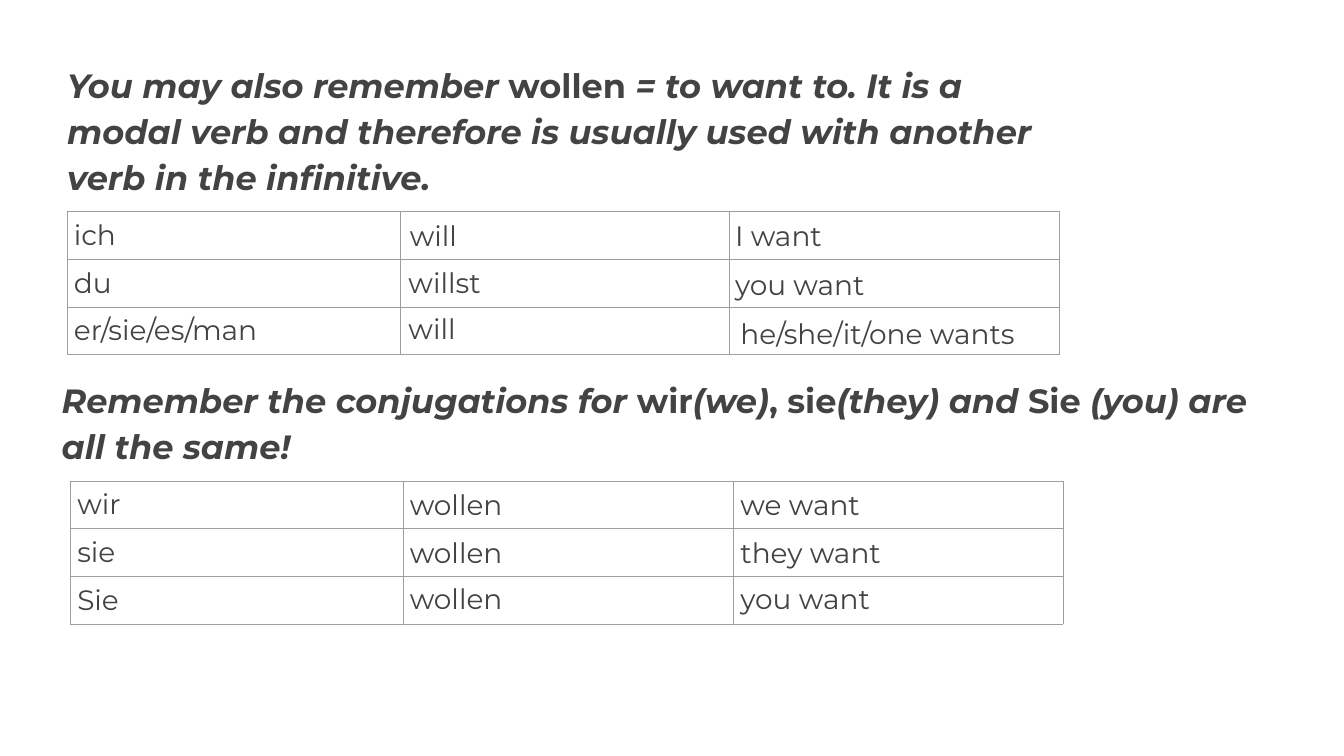
from dataclasses import dataclass

from lxml.etree import SubElement
from pptx import Presentation
from pptx.dml.color import RGBColor
from pptx.enum.text import MSO_ANCHOR, MSO_AUTO_SIZE, PP_ALIGN
from pptx.oxml.ns import qn
from pptx.util import Inches, Pt

INK, RULE = "434343", "9E9E9E"
BODY = {"name": "Montserrat", "size": Pt(30), "bold": False, "italic": False}
HEAD = BODY | {"size": Pt(36), "bold": True}
COLS = (4.95, 4.91, 4.91)
ROW = 0.65


@dataclass
class Label:
    text: str
    left: float
    top: float
    width: float = 4.86


@dataclass
class Verbs:
    left: float
    top: float
    names: tuple[str, ...]
    labels: tuple[Label, ...]


GROUPS = (
    Verbs(1, 3.15, ("ich", "du", "er/sie/es/man"), (
        Label("will", 6, 3.15),
        Label("willst", 5.98, 3.85),
        Label("will", 5.98, 4.54),
        Label("I want", 10.84, 3.15, 4.94),
        Label("you want", 10.84, 3.88, 7.77),
        Label("he/she/it/one wants", 10.92, 4.61, 8.08),
    )),
    Verbs(1.05, 7.16, ("wir", "sie", "Sie"), tuple(
        Label(text, left, top, width)
        for left, width, texts in (
            (6, 4.86, ("wollen",) * 3),
            (10.92, 4.94, ("we want", "they want", "you want")),
        )
        for text, top in zip(texts, (7.16, 7.87, 8.56))
    )),
)

INTRO = (
    "You may also remember", " wollen ",
    "= to want to. It is a modal verb and therefore is usually used "
    "with another verb in the infinitive.",
)
NOTE = ("Remember the conjugations for", " wir", "(we)", ", sie",
        "(they) and ", "Sie", " (you) are all the same!")


def tint(color, value: str) -> None:
    color.rgb = RGBColor.from_string(value)


def style(font, look: dict) -> None:
    for key, value in look.items():
        setattr(font, key, value)
    tint(font.color, INK)


def frame(shape, pad: float):
    """Set wrapping, top anchor and equal insets of a shape's text."""
    text = shape.text_frame
    look = {"word_wrap": True, "auto_size": MSO_AUTO_SIZE.NONE,
            "vertical_anchor": MSO_ANCHOR.TOP}
    sides = ("left", "right", "top", "bottom")
    look |= {f"margin_{side}": Inches(pad) for side in sides}
    for key, value in look.items():
        setattr(text, key, value)
    return text


def add_box(slide, left: float, top: float, width: float, height: float):
    return slide.shapes.add_textbox(*map(Inches, (left, top, width, height)))


def write_head(text, parts: tuple[str, ...]) -> None:
    """Write runs that alternate between italic and upright."""
    para = text.paragraphs[0]
    para.alignment = PP_ALIGN.LEFT
    para.line_spacing = 1.15
    for i, part in enumerate(parts):
        run = para.add_run()
        run.text = part
        style(run.font, HEAD | {"italic": i % 2 == 0})


def add_label(slide, label: Label) -> None:
    box = add_box(slide, label.left, label.top, label.width, 0.69)
    para = frame(box, 0.1).paragraphs[0]
    para.text = label.text
    style(para.runs[0].font, BODY)


def add_edges(cell) -> None:
    props = cell._tc.get_or_add_tcPr()
    for i, side in enumerate(("lnL", "lnR", "lnT", "lnB")):
        line = SubElement(props, qn(f"a:{side}"), w=str(Pt(0.75)))
        fill = SubElement(line, qn("a:solidFill"))
        SubElement(fill, qn("a:srgbClr"), val=RULE)
        props.insert(i, line)


def add_verbs(slide, group: Verbs) -> None:
    count = len(group.names)
    size = (group.left, group.top, sum(COLS), ROW * count)
    table = slide.shapes.add_table(count, len(COLS), *map(Inches, size)).table
    table.first_row = table.horz_banding = False
    for col, width in zip(table.columns, COLS):
        col.width = Inches(width)
    for row, name in zip(table.rows, group.names):
        row.height = Inches(ROW)
        row.cells[0].text = name
        style(row.cells[0].text_frame.paragraphs[0].runs[0].font, BODY)
        for cell in row.cells:
            for side in ("left", "right", "top", "bottom"):
                setattr(cell, f"margin_{side}", Inches(0.1))
            cell.fill.background()
            add_edges(cell)
    for label in group.labels:
        add_label(slide, label)


def main() -> None:
    deck = Presentation()
    deck.slide_width, deck.slide_height = Inches(20), Inches(11.25)
    slide = deck.slides.add_slide(deck.slide_layouts[5])
    title = slide.shapes.title
    place = {"left": 1, "top": 0.87, "width": 15, "height": 1.97}
    for key, value in place.items():
        setattr(title, key, Inches(value))
    write_head(frame(title, 0), INTRO)
    first, second = GROUPS
    add_verbs(slide, first)
    write_head(frame(add_box(slide, 0.82, 5.46, 17.87, 0.79), 0.1), NOTE)
    add_verbs(slide, second)
    deck.save("out.pptx")


if __name__ == "__main__":
    main()
